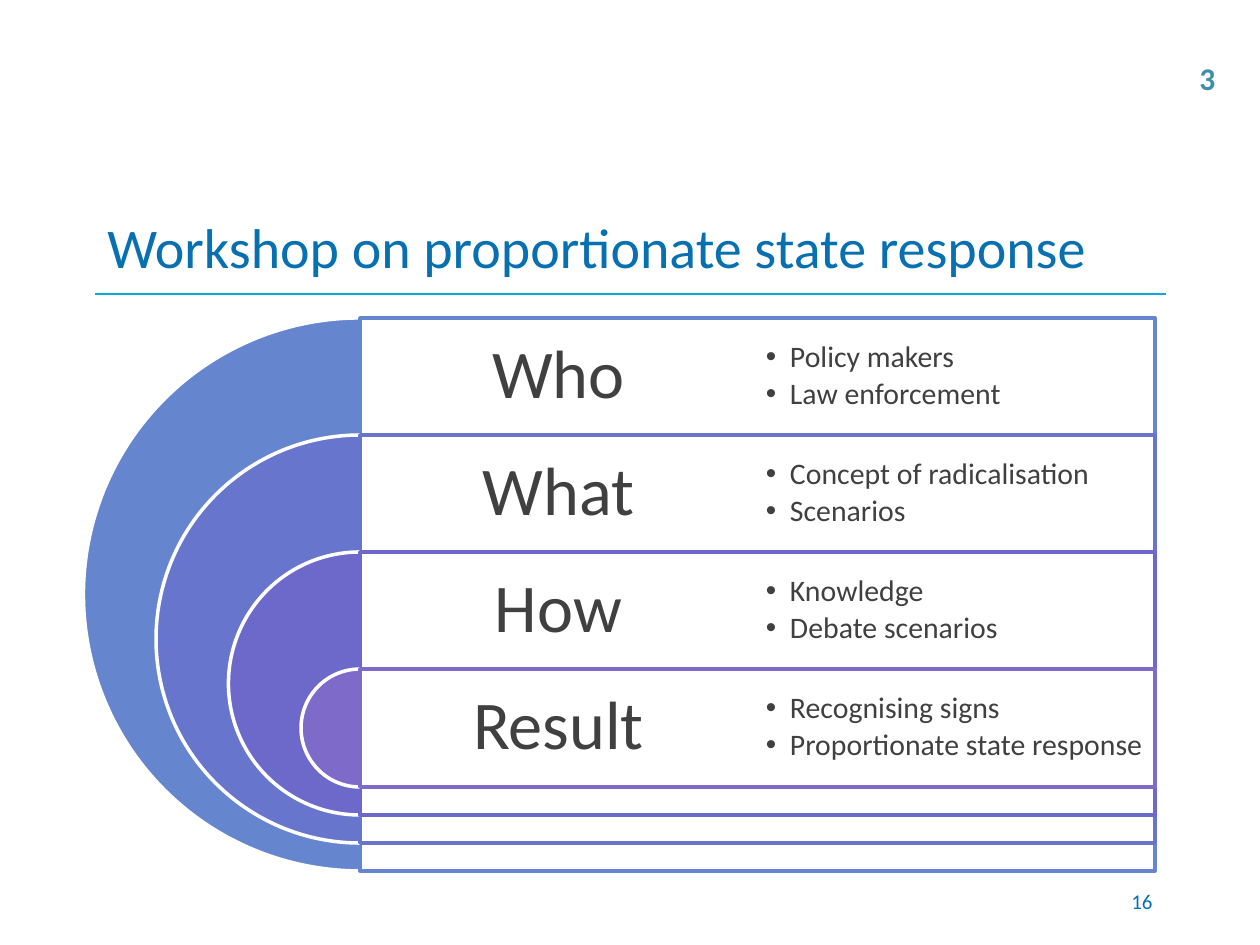
import pptx
import pptx.util
from pptx.dml.color import RGBColor
from pptx.enum.shapes import MSO_CONNECTOR, MSO_SHAPE
from pptx.enum.text import MSO_ANCHOR, PP_ALIGN
from pptx.oxml.ns import qn
from lxml import etree

# Content
TITLE = "Workshop on proportionate state response"
PAGE_NUMBER = "16"
CORNER_NUMBER = "3"
LEVELS = [
    ("Who", ["Policy makers", "Law enforcement"], "6585CF"),
    ("What", ["Concept of radicalisation", "Scenarios"], "6775CD"),
    ("How", ["Knowledge", "Debate scenarios"], "6C69CB"),
    ("Result", ["Recognising signs", "Proportionate state response"], "7E6BC9"),
]

THEME = {
    "font": "Calibri",
    "white": "FFFFFF",
    "rule": "0BA7DF",
    "title": {"size": 32, "color": "0770B1"},
    "page": {"size": 12, "color": "0770B1"},
    "corner": {"size": 18, "color": "3E8EA9", "bold": True},
    "heading": {"size": 39, "color": "404040"},
    "point": {"size": 17, "color": "404040"},
}

# Layout in px
TOP, ROW = 318, 117
CENTRE_X = 360
OUTER, SHRINK = 553, 145
BOX_WIDTH = 795
COLUMN = 397
INDENT = 24


def px(value):
    return pptx.util.Emu(round(value * 914400 / 126))


def rgb(value):
    return RGBColor.from_string(value)


def add_shape(slide, preset, box, fill, line):
    shape = slide.shapes.add_shape(preset, *map(px, box))
    shape.shadow.inherit = False
    shape.fill.solid()
    shape.fill.fore_color.rgb = rgb(fill)
    shape.line.color.rgb = rgb(line)
    shape.line.width = pptx.util.Pt(2)
    return shape


def add_bullet(paragraph):
    properties = paragraph._p.get_or_add_pPr()
    properties.set("marL", str(px(INDENT)))
    properties.set("indent", str(-px(INDENT)))
    etree.SubElement(properties, qn("a:buFont")).set("typeface", "Arial")
    etree.SubElement(properties, qn("a:buChar")).set("char", "•")


def add_text(slide, box, lines, style, inset=None, bullets=False,
             wrap=True, anchor=MSO_ANCHOR.MIDDLE, **paragraph_format):
    frame = slide.shapes.add_textbox(*map(px, box)).text_frame
    frame.word_wrap = wrap
    frame.vertical_anchor = anchor
    if inset is not None:
        for side in ("left", "right", "top", "bottom"):
            setattr(frame, f"margin_{side}", px(inset))
    for index, line in enumerate(lines):
        paragraph = frame.add_paragraph() if index else frame.paragraphs[0]
        if bullets:
            add_bullet(paragraph)
        for name, value in paragraph_format.items():
            setattr(paragraph, name, value)
        run = paragraph.add_run()
        run.text = line
        font_format = {
            "name": THEME["font"],
            "size": pptx.util.Pt(style["size"]),
            "bold": style.get("bold", False),
        }
        for name, value in font_format.items():
            setattr(run.font, name, value)
        run.font.color.rgb = rgb(style["color"])


def add_title_rule(slide):
    rule = slide.shapes.add_connector(
        MSO_CONNECTOR.STRAIGHT, px(95), px(294), px(1166), px(294))
    rule.line.color.rgb = rgb(THEME["rule"])
    rule.line.width = pptx.util.Pt(0.75)
    etree.SubElement(rule._element.spPr, qn("a:effectLst"))


def add_level(slide, index, heading, color):
    top = TOP + index * ROW
    diameter = OUTER - index * SHRINK
    half_disc = add_shape(
        slide, MSO_SHAPE.PIE,
        (CENTRE_X - diameter / 2, top, diameter, diameter),
        color, THEME["white"])
    # Angles in 100000ths of the stored value: 90 and 270 degrees
    half_disc.adjustments[0], half_disc.adjustments[1] = 54, 162

    panel = add_shape(slide, MSO_SHAPE.RECTANGLE,
                      (CENTRE_X, top, BOX_WIDTH, diameter),
                      THEME["white"], color)
    alpha = etree.SubElement(
        panel._element.spPr.find(f"{qn('a:solidFill')}/{qn('a:srgbClr')}"),
        qn("a:alpha"))
    alpha.set("val", "90000")

    add_text(slide, (CENTRE_X, top, COLUMN, ROW), [heading],
             THEME["heading"], inset=20,
             alignment=PP_ALIGN.CENTER, line_spacing=0.9)


def main():
    deck = pptx.Presentation()
    deck.slide_width, deck.slide_height = px(1260), px(945)
    slide = deck.slides.add_slide(deck.slide_layouts[6])

    # Nested levels, then the points beside each heading
    add_title_rule(slide)
    for index, (heading, _, color) in enumerate(LEVELS):
        add_level(slide, index, heading, color)
    for index, (_, points, _) in enumerate(LEVELS):
        add_text(slide,
                 (CENTRE_X + COLUMN, TOP + index * ROW, COLUMN, ROW),
                 points, THEME["point"], inset=9, bullets=True,
                 line_spacing=0.9, space_after=pptx.util.Pt(2.5))

    # Title and numbers
    add_text(slide, (95, 199, 1071, 95), [TITLE], THEME["title"])
    add_text(slide, (903, 876, 262, 50), [PAGE_NUMBER], THEME["page"],
             alignment=PP_ALIGN.RIGHT)
    add_text(slide, (1187, 53, 42, 50), [CORNER_NUMBER], THEME["corner"],
             wrap=False, anchor=MSO_ANCHOR.TOP)

    deck.save("out.pptx")


if __name__ == "__main__":
    main()
